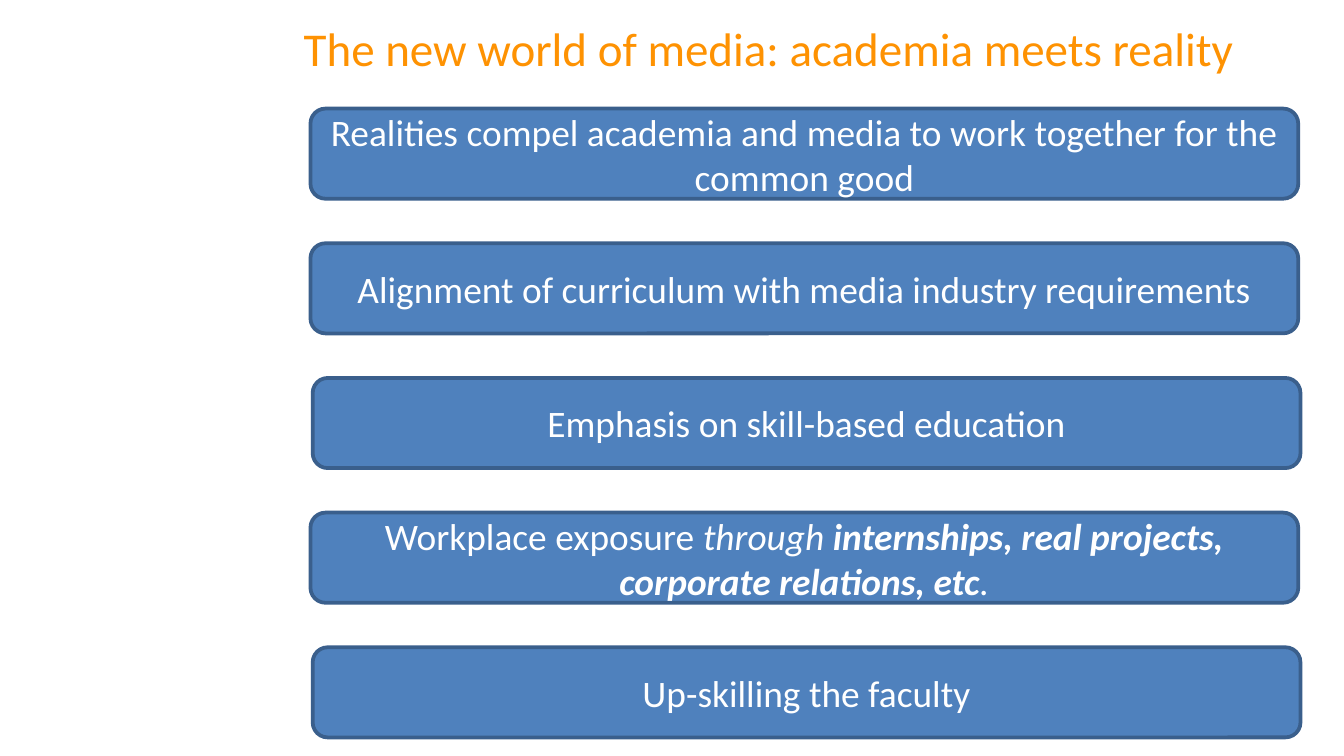
from pptx import Presentation
from pptx.dml.color import RGBColor
from pptx.enum.shapes import MSO_SHAPE
from pptx.enum.text import MSO_ANCHOR, PP_ALIGN
from pptx.util import Pt

ROUNDED = MSO_SHAPE.ROUNDED_RECTANGLE
MIDDLE = MSO_ANCHOR.MIDDLE
CENTER = PP_ALIGN.CENTER

ORANGE = RGBColor(0xFE, 0x92, 0x02)
BLUE = RGBColor(0x4F, 0x81, 0xBD)
DARK_BLUE = RGBColor(0x3A, 0x5F, 0x8C)
WHITE = RGBColor(0xFF, 0xFF, 0xFF)

FIRST_TOP, STEP = 58.2, 72.15
BAR_WIDTH, BAR_HEIGHT = 529.2, 48.3

# Each bar: left edge, then runs of (text, italic, bold)
BARS = [
    (166.3, [("Realities compel academia and media to work together "
              "for the common good", False, False)]),
    (166.3, [("Alignment of curriculum with media industry requirements",
              False, False)]),
    (167.5, [("Emphasis on skill-based education", False, False)]),
    (166.3, [("Workplace exposure ", False, False),
             ("through ", True, False),
             ("internships, real projects, corporate relations, etc",
              True, True),
             (".", True, False)]),
    (167.5, [("Up-skilling the faculty", False, False)]),
]

prs = Presentation()
prs.slide_width, prs.slide_height = Pt(720), Pt(405)
slide = prs.slides.add_slide(prs.slide_layouts[6])

title = slide.shapes.add_textbox(Pt(155.6), Pt(3), Pt(517), Pt(45.4))
title.text_frame.word_wrap = True
title.text_frame.vertical_anchor = MIDDLE
heading = title.text_frame.paragraphs[0]
heading.text = "The new world of media: academia meets reality"
heading.font.name = "Calibri"
heading.font.size = Pt(25.2)
heading.font.color.rgb = ORANGE

for row, (left, runs) in enumerate(BARS):
    bar = slide.shapes.add_shape(ROUNDED, Pt(left), Pt(FIRST_TOP + row * STEP),
                                 Pt(BAR_WIDTH), Pt(BAR_HEIGHT))
    bar.shadow.inherit = False
    bar.fill.solid()
    bar.fill.fore_color.rgb = BLUE
    bar.line.color.rgb = DARK_BLUE
    bar.line.width = Pt(2)
    bar.text_frame.word_wrap = True
    bar.text_frame.vertical_anchor = MIDDLE

    statement = bar.text_frame.paragraphs[0]
    statement.alignment = CENTER
    statement.font.name = "Calibri"
    statement.font.size = Pt(20)
    statement.font.color.rgb = WHITE
    for text, italic, bold in runs:
        run = statement.add_run()
        run.text = text
        run.font.italic = italic
        run.font.bold = bold

prs.save("out.pptx")
